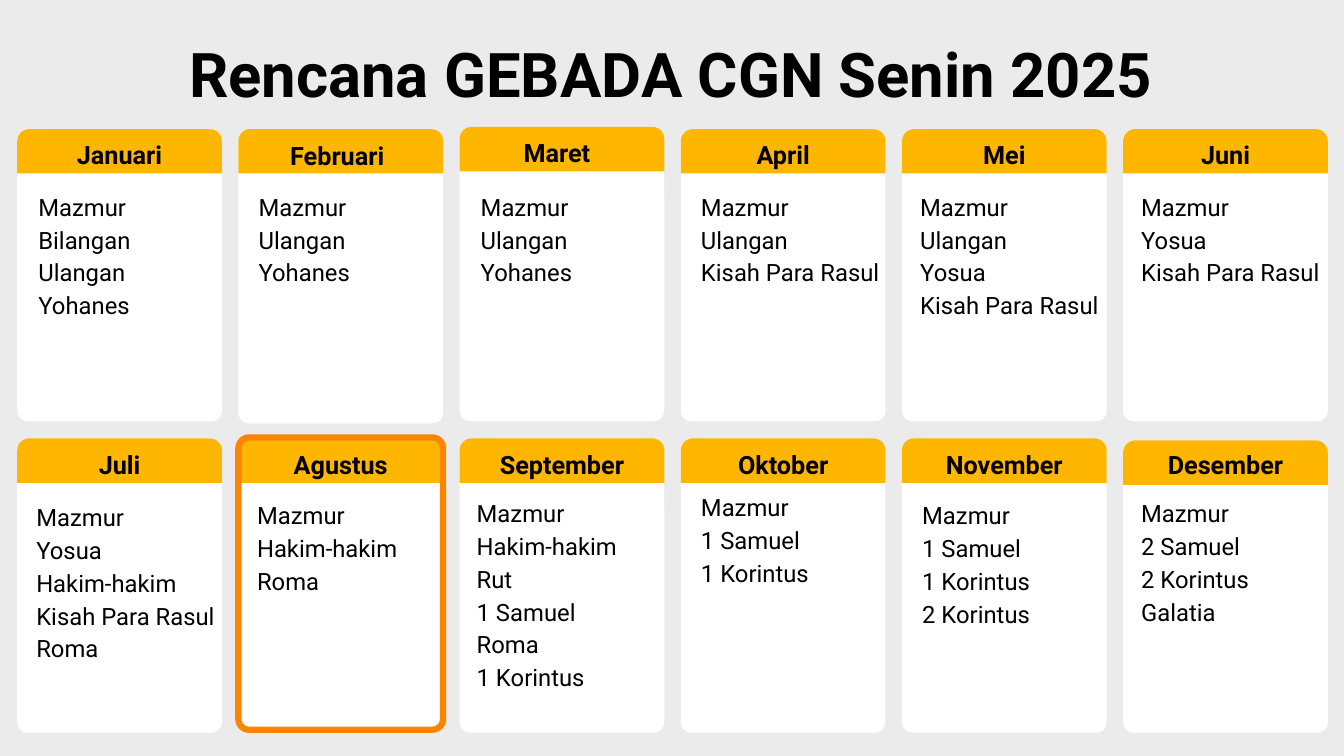
from dataclasses import dataclass

from pptx import Presentation
from pptx.dml.color import RGBColor
from pptx.enum.shapes import MSO_SHAPE as Shape
from pptx.enum.text import MSO_AUTO_SIZE as AutoSize, PP_ALIGN as Align
from pptx.util import Pt

PAGE_WIDTH, PAGE_HEIGHT = 960, 540
COLUMNS = 6
LEFT, PITCH = 12.3, 158
CARD_WIDTH, CARD_HEIGHT, HEADER_HEIGHT = 146.2, 208.8, 31.7
CARD_TOPS = (92.2, 314.6)
HEADER_TOPS = (92.2, 313.2)
LABEL_TOPS = (99.4, 321.1)


def color(value):
    return RGBColor.from_string(value)


@dataclass
class Month:
    name: str
    books: list
    books_top: float = 137.5
    books_shift: float = 0
    card_drop: float = 0
    header_drop: float = 0
    label_shift: float = 0
    label_drop: float = 0


MONTHS = [
    Month("Januari", ["Mazmur", "Bilangan", "Ulangan", "Yohanes"], books_shift=0.7),
    Month("Februari", ["Mazmur", "Ulangan", "Yohanes"],
          card_drop=1.4, label_shift=-2.5, label_drop=0.7),
    Month("Maret", ["Mazmur", "Ulangan", "Yohanes"], books_shift=0.7,
          header_drop=-1.5, label_shift=-3.6, label_drop=-1.5),
    Month("April", ["Mazmur", "Ulangan", "Kisah Para Rasul"]),
    Month("Mei", ["Mazmur", "Ulangan", "Yosua", "Kisah Para Rasul"], books_shift=-1.4),
    Month("Juni", ["Mazmur", "Yosua", "Kisah Para Rasul"], books_shift=-1.6),
    Month("Juli", ["Mazmur", "Yosua", "Hakim-hakim", "Kisah Para Rasul", "Roma"],
          359.3, -0.8),
    Month("Agustus", ["Mazmur", "Hakim-hakim", "Roma"], 357.8, -1.1),
    Month("September", ["Mazmur", "Hakim-hakim", "Rut", "1 Samuel", "Roma", "1 Korintus"],
          356.4, -2.2),
    Month("Oktober", ["Mazmur", "1 Samuel", "1 Korintus"], 352.1),
    Month("November", ["Mazmur", "1 Samuel", "1 Korintus", "2 Korintus"], 357.8),
    Month("Desember", ["Mazmur", "2 Samuel", "2 Korintus", "Galatia"],
          356.4, -1.6, header_drop=1.4),
]
HIGHLIGHTED = "Agustus"


class Painter:
    font = "Roboto"
    ink = "000000"
    ground = "EBEBEB"
    paper = "FFFFFF"
    amber = "FFB600"
    orange = "FB8500"

    def __init__(self, page):
        self.page = page

    def block(self, kind, left, top, width, height, fill=None, line=None, corners=()):
        shape = self.page.shapes.add_shape(kind, Pt(left), Pt(top), Pt(width), Pt(height))
        shape.shadow.inherit = False
        for index, corner in enumerate(corners):
            shape.adjustments[index] = corner
        if fill:
            shape.fill.solid()
            shape.fill.fore_color.rgb = color(fill)
        else:
            shape.fill.background()
        if line:
            shape.line.color.rgb = color(line)
            shape.line.width = Pt(4.5)
        else:
            shape.line.fill.background()

    def card(self, left, top, fill=None, line=None):
        self.block(Shape.ROUNDED_RECTANGLE, left, top, CARD_WIDTH, CARD_HEIGHT,
                   fill, line, (0.052,))

    def header(self, left, top):
        self.block(Shape.ROUND_2_SAME_RECTANGLE, left, top, CARD_WIDTH, HEADER_HEIGHT,
                   self.amber, corners=(0.267, 0))

    def text(self, lines, left, top, width, height, size, bold=False,
             align=Align.LEFT, indent=0, after=0):
        box = self.page.shapes.add_textbox(Pt(left), Pt(top), Pt(width), Pt(height))
        frame = box.text_frame
        frame.word_wrap = True
        frame.auto_size = AutoSize.SHAPE_TO_FIT_TEXT
        frame.margin_left = Pt(indent)
        frame.margin_top = frame.margin_right = frame.margin_bottom = 0
        for index, line in enumerate(lines):
            para = frame.add_paragraph() if index else frame.paragraphs[0]
            para.text = line
            para.alignment = align
            para.space_after = Pt(after)
            para.font.name = self.font
            para.font.size = Pt(size)
            para.font.bold = bold
            para.font.color.rgb = color(self.ink)

    def heading(self, words, left, top, width, height, size):
        self.text([words], left, top, width, height, size, True, Align.CENTER)

    def book_list(self, books, left, top):
        self.text(books, left, top, 145.4, 23.76 * len(books) - 3.6, 17,
                  indent=14.4, after=3)


def main():
    deck = Presentation()
    deck.slide_width, deck.slide_height = Pt(PAGE_WIDTH), Pt(PAGE_HEIGHT)
    painter = Painter(deck.slides.add_slide(deck.slide_layouts[6]))
    painter.block(Shape.RECTANGLE, 0, 0, PAGE_WIDTH, PAGE_HEIGHT, painter.ground)

    cells = [(month, LEFT + PITCH * (index % COLUMNS), index // COLUMNS)
             for index, month in enumerate(MONTHS)]
    for month, left, row in cells:
        painter.card(left, CARD_TOPS[row] + month.card_drop, painter.paper)
    for month, left, row in cells:
        painter.header(left, HEADER_TOPS[row] + month.header_drop)
    for month, left, row in cells:
        painter.heading(month.name, left + month.label_shift,
                        LABEL_TOPS[row] + month.label_drop, CARD_WIDTH, 21.6, 18)
    painter.heading("Rencana GEBADA CGN Senin 2025", 18, 25.9, 923, 53.3, 44)
    for month, left, row in cells:
        painter.book_list(month.books, left + month.books_shift, month.books_top)
    for month, left, row in cells:
        if month.name == HIGHLIGHTED:
            painter.card(left, 312.5, line=painter.orange)

    deck.save("out.pptx")


if __name__ == "__main__":
    main()
